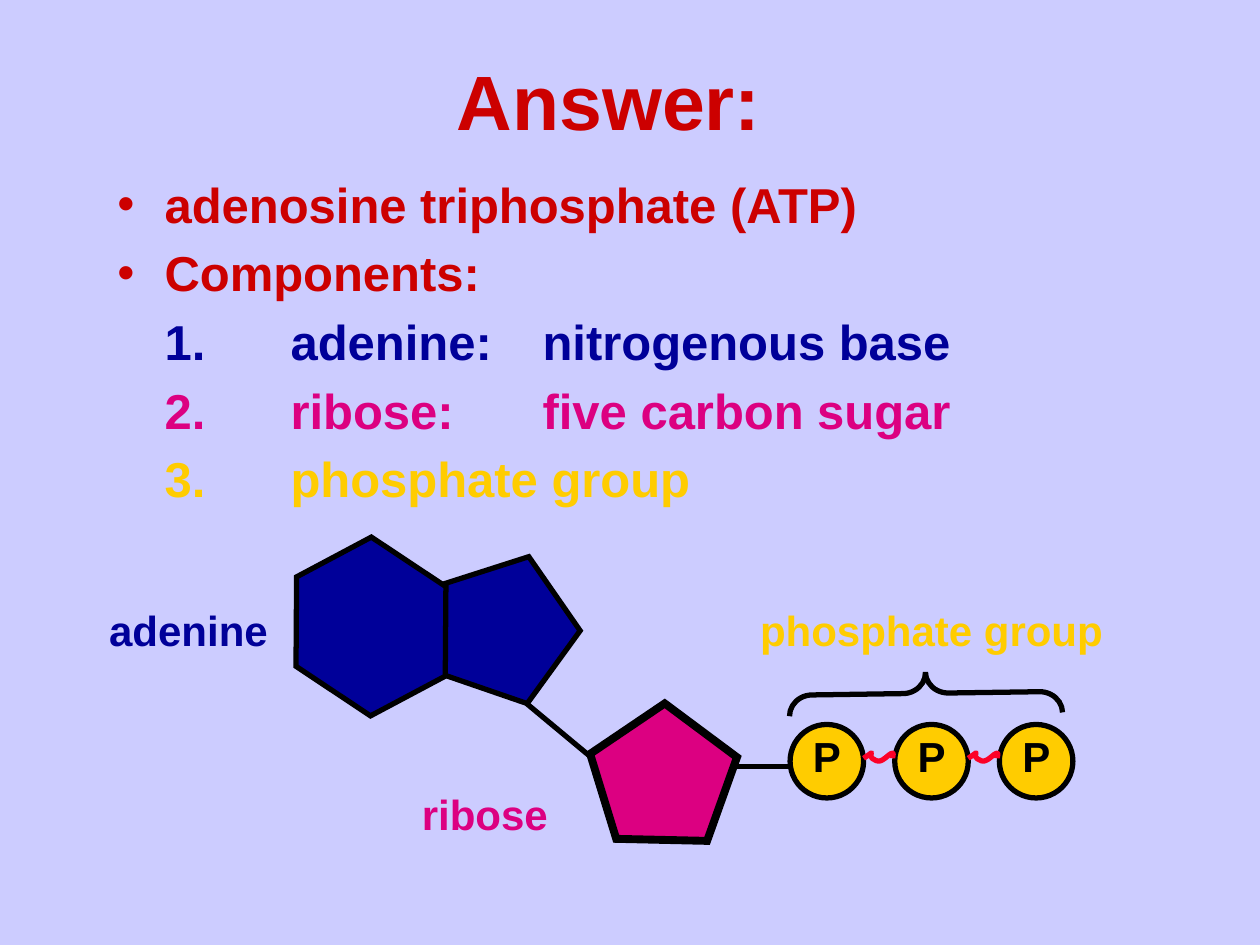
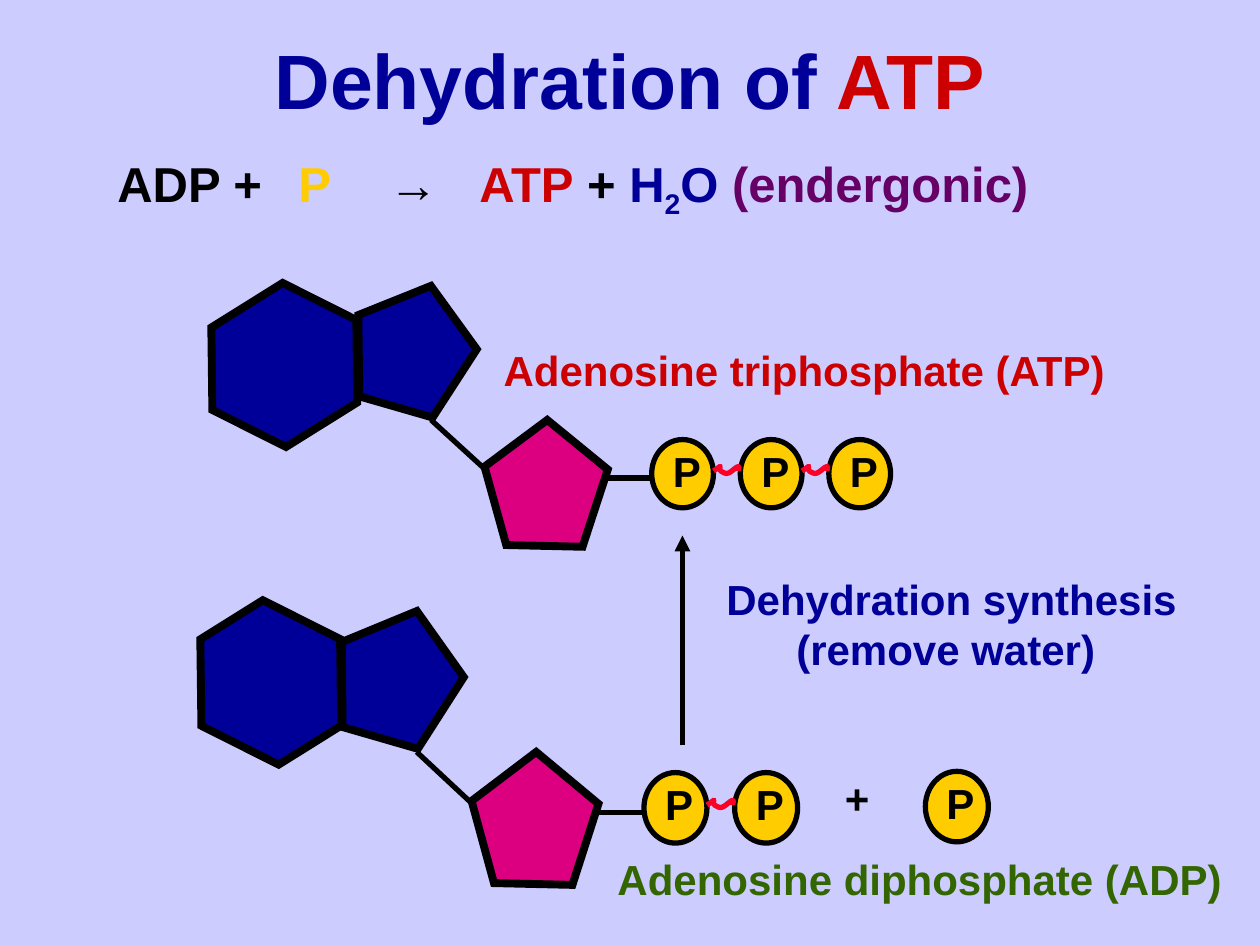
from pptx import Presentation
from pptx.dml.color import RGBColor
from pptx.enum.shapes import MSO_CONNECTOR, MSO_SHAPE as SHAPE
from pptx.enum.text import MSO_ANCHOR, PP_ALIGN
from pptx.oxml.ns import qn
from pptx.util import Pt
from lxml.etree import SubElement

# Shared look
FONT = "Arial"
TITLE_SIZE, BODY_SIZE, LABEL_SIZE = 44, 28, 24
LILAC, BLACK, RED, NAVY = "CCCCFF", "000000", "CC0000", "000099"
PINK, GOLD, PURPLE, GREEN, SCARLET = "DC0081", "FFCC00", "660066", "336600", "FC0128"
HANG = 27
BODY_GAP = 5.6

# Slide 1: text as (text, colour) runs
ANSWER_TITLE = [("Answer:", RED)]
ANSWER_BULLETS = [
    [("adenosine triphosphate (ATP)", RED)],
    [("Components:", RED)],
]
COMPONENTS = [
    [("1.\tadenine:\tnitrogenous base", NAVY)],
    [("2.\tribose:\tfive carbon sugar", PINK)],
    [("3.\tphosphate group", GOLD)],
]
COMPONENT_TAB = 72
ANSWER_LABELS = [
    ("adenine", NAVY, (55.3, 342, 105, 36)),
    ("ribose", PINK, (234, 447, 86.5, 36)),
    ("phosphate group", GOLD, (427.2, 342, 212.5, 36)),
]

# Slide 2
DEHYDRATION_TITLE = [("Dehydration of", NAVY), (" ATP", RED)]
EQUATION = [
    ("ADP +\t", BLACK), ("P\t", GOLD), ("→\t", BLACK), ("ATP", RED), (" + ", BLACK),
    ("H", NAVY), ("2", NAVY, -25), ("O ", NAVY), ("(endergonic)", PURPLE),
]
EQUATION_TAB = 51.7
DEHYDRATION_LABELS = [
    ("Adenosine triphosphate (ATP)", RED, (280.7, 193.3, 359, 36)),
    ("Adenosine diphosphate (ADP)", GREEN, (345.8, 484.2, 360, 36)),
    ("+", BLACK, (475.7, 438, 29, 36)),
]

# Molecules: ring boxes, then the first phosphate, their number and their pitch
ATP_LARGE = dict(
    hexagon=(163.5, 313, 97, 90), hexagon_turn=332, hexagon_adj=0.27,
    purine=(250.5, 321, 84, 78), purine_turn=90.6, base_line=3,
    ribose=(337, 402, 84, 78),
    phosphate=(451.5, 414, 42, 42), count=3, pitch=59.8, letter_dx=6)
SMALL = dict(hexagon_turn=328, hexagon_adj=0.304, purine_turn=16.1,
             base_line=4.5, letter_dx=5)
ATP_SMALL = SMALL | dict(
    hexagon=(114, 168.3, 97, 80.5), purine=(201, 162, 70.5, 72),
    ribose=(276.7, 240, 70.5, 72),
    phosphate=(372.4, 251.2, 35.3, 39), count=3, pitch=50.6)
ADP = SMALL | dict(
    hexagon=(108, 347.7, 93.5, 84.5), purine=(191.5, 347.7, 72.5, 75.5),
    ribose=(269.3, 429.7, 72.5, 75.5),
    phosphate=(368, 441.5, 36, 40.3), count=2, pitch=51.8)
FREE_PHOSPHATE = (528.8, 440.8, 36, 40.3)

# High-energy bond: cubic curves for a gap of 17.8 points
WAVE_GAP = 17.8
WAVE = [
    [(0, 0), (10, -6.5), (-0.7, -1.4), (7.4, 1.4)],
    [(7.4, 1.4), (10.8, 2.9), (14.4, -2.9), (16.6, -2.9)],
    [(16.6, -2.9), (17.3, -2.9), (16.6, -0.7), (16.6, 0)],
]


def color(hex_code):
    return RGBColor.from_string(hex_code)


def box(left, top, width, height):
    return Pt(left), Pt(top), Pt(width), Pt(height)


# Text
def new_frame(slide, place, wrap=True):
    frame = slide.shapes.add_textbox(*box(*place)).text_frame
    frame.word_wrap = wrap
    return frame


def write(paragraph, runs, size):
    paragraph.font.name, paragraph.font.size, paragraph.font.bold = FONT, Pt(size), True
    for text, hex_code, *baseline in runs:
        run = paragraph.add_run()
        run.text = text
        run.font.color.rgb = color(hex_code)
        if baseline:
            run.font._element.set("baseline", str(baseline[0] * 1000))


def set_indent(paragraph, left, first=0, tab=COMPONENT_TAB):
    props = paragraph._p.get_or_add_pPr()
    for name, value in (("marL", left), ("indent", first), ("defTabSz", tab)):
        props.set(name, str(Pt(value)))
    return props


def add_title(slide, runs, place):
    frame = new_frame(slide, place)
    frame.vertical_anchor = MSO_ANCHOR.MIDDLE
    frame.paragraphs[0].alignment = PP_ALIGN.CENTER
    write(frame.paragraphs[0], runs, TITLE_SIZE)


def add_label(slide, text, hex_code, place):
    frame = new_frame(slide, place, wrap=False)
    write(frame.paragraphs[0], [(text, hex_code)], LABEL_SIZE)
    return frame


# Drawing
def add_outlined(slide, kind, place, fill, weight, turn=0, adjust=()):
    shape = slide.shapes.add_shape(kind, *box(*place))
    shape.shadow.inherit = False
    shape.rotation = turn
    for index, value in enumerate(adjust):
        shape.adjustments[index] = value
    if fill:
        shape.fill.solid()
        shape.fill.fore_color.rgb = color(fill)
    else:
        shape.fill.background()
    shape.line.color.rgb = color(BLACK)
    shape.line.width = Pt(weight)
    SubElement(shape.line._get_or_add_ln(), qn("a:miter"), lim="800000")


def add_line(slide, start, end, arrow=False):
    line = slide.shapes.add_connector(
        MSO_CONNECTOR.STRAIGHT, *(Pt(value) for value in (*start, *end)))
    line.line.color.rgb = color(BLACK)
    line.line.width = Pt(3)
    if arrow:
        SubElement(line.line._get_or_add_ln(), qn("a:tailEnd"), type="triangle")
    SubElement(line._element.spPr, qn("a:effectLst"))


def curve_points(curve, steps=8):
    for step in range(1, steps + 1):
        t = step / steps
        weights = ((1 - t) ** 3, 3 * t * (1 - t) ** 2, 3 * t * t * (1 - t), t ** 3)
        yield tuple(sum(w * p[axis] for w, p in zip(weights, curve)) for axis in (0, 1))


def add_wave(slide, left, top, gap):
    scale = gap / WAVE_GAP
    points = [(Pt(left + x * scale), Pt(top + y * scale))
              for curve in WAVE for x, y in curve_points(curve)]
    builder = slide.shapes.build_freeform(Pt(left), Pt(top))
    builder.add_line_segments(points, close=False)
    wave = builder.convert_to_shape()
    wave.shadow.inherit = False
    wave.fill.background()
    wave.line.color.rgb = color(SCARLET)
    wave.line.width = Pt(3)


def add_phosphate(slide, place, letter_dx):
    add_outlined(slide, SHAPE.OVAL, place, GOLD, 3)
    add_label(slide, "P", BLACK, (place[0] + letter_dx, place[1], 30.5, 36))


def add_molecule(slide, hexagon, hexagon_turn, hexagon_adj, purine, purine_turn,
                 base_line, ribose, phosphate, count, pitch, letter_dx):
    # Adenine and ribose rings
    add_outlined(slide, SHAPE.REGULAR_PENTAGON, purine, NAVY, base_line, purine_turn)
    add_outlined(slide, SHAPE.HEXAGON, hexagon, NAVY, base_line, hexagon_turn,
                 (hexagon_adj, 1.1547))
    add_outlined(slide, SHAPE.REGULAR_PENTAGON, ribose, PINK, 4.5, 1.3)
    # Bonds on both sides of the ribose
    left, top, width, height = ribose
    add_line(slide, (left - 0.43 * width, top), (left, top + 0.385 * height))
    bond_y = top + 0.46 * height
    add_line(slide, (left + width, bond_y), (phosphate[0], bond_y))
    # Phosphate chain
    first, top, width, height = phosphate
    for index in range(count):
        left = first + index * pitch
        add_phosphate(slide, (left, top, width, height), letter_dx)
        if index:
            gap = pitch - width
            add_wave(slide, left - gap, top + 0.46 * height, gap)


def new_slide(deck):
    slide = deck.slides.add_slide(deck.slide_layouts[6])
    slide.background.fill.solid()
    slide.background.fill.fore_color.rgb = color(LILAC)
    return slide


def build_answer(deck):
    slide = new_slide(deck)
    add_title(slide, ANSWER_TITLE, (42, 12, 612, 90))
    # Bulleted facts and numbered components
    body = new_frame(slide, (60, 96, 612, 324))
    for index, runs in enumerate(ANSWER_BULLETS + COMPONENTS):
        paragraph = body.add_paragraph() if index else body.paragraphs[0]
        paragraph.space_before = Pt(BODY_GAP)
        bulleted = index < len(ANSWER_BULLETS)
        props = set_indent(paragraph, HANG, -HANG if bulleted else 0)
        if bulleted:
            SubElement(props, qn("a:buFont"), typeface=FONT)
            SubElement(props, qn("a:buChar"), char="•")
        write(paragraph, runs, BODY_SIZE)
    # Labelled molecule
    add_molecule(slide, **ATP_LARGE)
    for label in ANSWER_LABELS:
        add_label(slide, *label)
    add_outlined(slide, SHAPE.LEFT_BRACE, (517, 318.2, 24, 156), None, 3, 89.2,
                 (0.542, 0.5))


def build_dehydration(deck):
    slide = new_slide(deck)
    add_title(slide, DEHYDRATION_TITLE, (54, 0, 612, 90))
    # Equation, spaced by even tabs
    equation = new_frame(slide, (60, 84, 612, 66)).paragraphs[0]
    equation.space_before = Pt(BODY_GAP)
    set_indent(equation, 0, tab=EQUATION_TAB)
    write(equation, EQUATION, BODY_SIZE)
    # Product above, reactants below
    add_molecule(slide, **ATP_SMALL)
    add_molecule(slide, **ADP)
    add_phosphate(slide, FREE_PHOSPHATE, SMALL["letter_dx"])
    for label in DEHYDRATION_LABELS:
        add_label(slide, *label)
    # Reaction arrow and its caption
    add_line(slide, (390, 426), (390, 306), arrow=True)
    caption = add_label(slide, "Dehydration synthesis", NAVY, (408, 324, 272, 65))
    second = caption.add_paragraph()
    set_indent(second, 40)
    write(second, [("(remove water)", NAVY)], LABEL_SIZE)


def main():
    deck = Presentation()
    deck.slide_width, deck.slide_height = Pt(720), Pt(540)
    build_answer(deck)
    build_dehydration(deck)
    deck.save("out.pptx")


if __name__ == "__main__":
    main()
